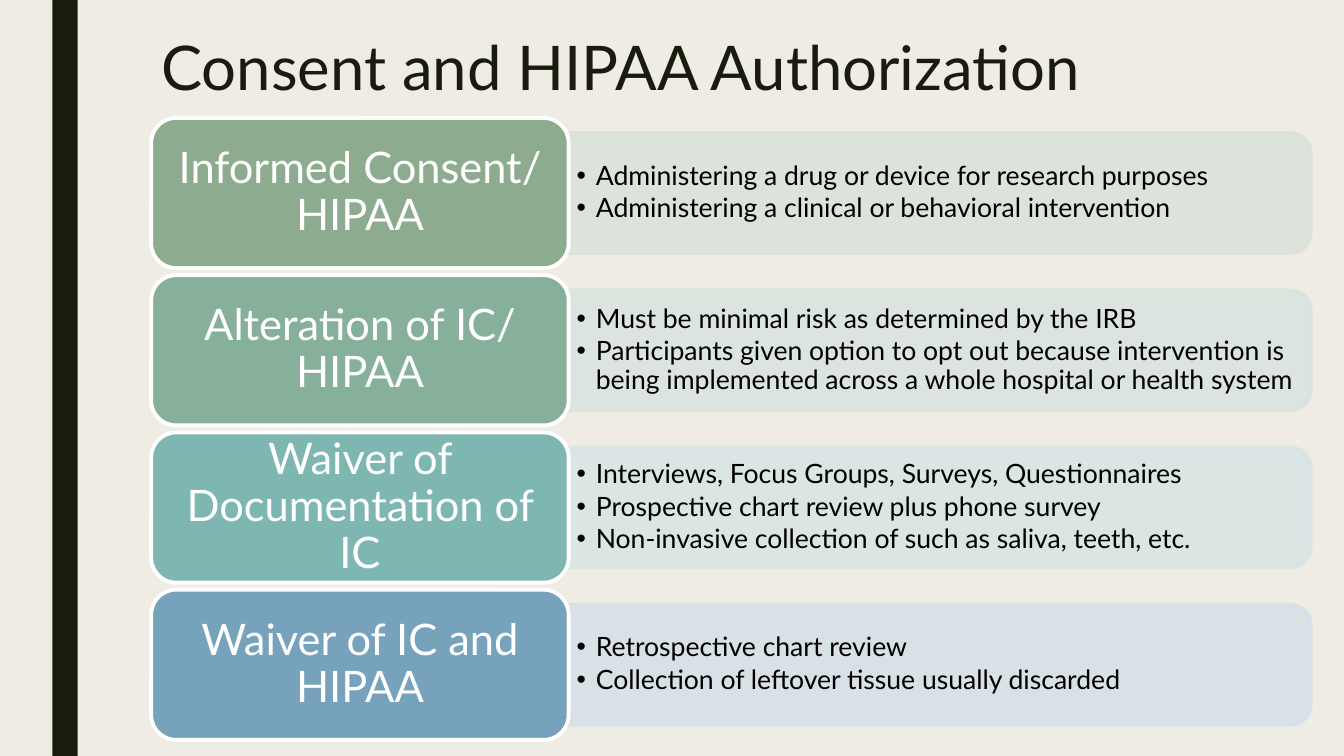
from pptx import Presentation
from pptx.dml.color import RGBColor
from pptx.enum.shapes import MSO_SHAPE
from pptx.enum.text import MSO_ANCHOR, PP_ALIGN
from pptx.oxml.ns import qn
from pptx.util import Inches, Pt
from lxml import etree

RECTANGLE = MSO_SHAPE.RECTANGLE
ROUNDED = MSO_SHAPE.ROUNDED_RECTANGLE
ROUNDED_TOP = MSO_SHAPE.ROUND_2_SAME_RECTANGLE
TOP, MIDDLE = MSO_ANCHOR.TOP, MSO_ANCHOR.MIDDLE
LEFT, CENTER = PP_ALIGN.LEFT, PP_ALIGN.CENTER

CREAM = RGBColor(0xEF, 0xED, 0xE3)
INK = RGBColor(0x19, 0x1B, 0x0E)
WHITE = RGBColor(0xFF, 0xFF, 0xFF)
BLACK = RGBColor(0x00, 0x00, 0x00)
SAGE, PALE_SAGE = RGBColor(0x8D, 0xAB, 0x8E), RGBColor(0xDB, 0xE2, 0xDB)
GREEN, PALE_GREEN = RGBColor(0x86, 0xB0, 0x9A), RGBColor(0xD9, 0xE4, 0xDE)
TEAL, PALE_TEAL = RGBColor(0x7E, 0xB6, 0xB1), RGBColor(0xD8, 0xE5, 0xE5)
BLUE, PALE_BLUE = RGBColor(0x77, 0xA2, 0xBB), RGBColor(0xD6, 0xE0, 0xE7)

ROWS = [
    ("Informed Consent/ HIPAA", SAGE, PALE_SAGE, [
        "Administering a drug or device for research purposes",
        "Administering a clinical or behavioral intervention"]),
    ("Alteration of IC/ HIPAA", GREEN, PALE_GREEN, [
        "Must be minimal risk as determined by the IRB",
        "Participants given option to opt out because intervention is "
        "being implemented across a whole hospital or health system"]),
    ("Waiver of Documentation of IC", TEAL, PALE_TEAL, [
        "Interviews, Focus Groups, Surveys, Questionnaires",
        "Prospective chart review plus phone survey",
        "Non-invasive collection of such as saliva, teeth, etc."]),
    ("Waiver of IC and HIPAA", BLUE, PALE_BLUE, [
        "Retrospective chart review",
        "Collection of leftover tissue usually discarded"]),
]
ROW_TOP, ROW_PITCH = 1.17, 1.56
LABEL_LEFT, LABEL_WIDTH, LABEL_HEIGHT = 1.5, 4.14, 1.49
PANEL_LEFT, PANEL_WIDTH, PANEL_HEIGHT = 5.64, 7.36, 1.19


class ConsentSlide:
    """Holds the font and the current slide, and draws its elements."""

    font = "Lato"

    def __init__(self, deck):
        self.slide = deck.slides.add_slide(deck.slide_layouts[5])
        self.slide.background.fill.solid()
        self.slide.background.fill.fore_color.rgb = CREAM

    def set_text(self, frame, lines, size, color, align, anchor, spacing, insets):
        frame.text = "\n".join(lines)
        frame.word_wrap = True
        frame.vertical_anchor = anchor
        frame.margin_left = frame.margin_right = Inches(insets[0])
        frame.margin_top = frame.margin_bottom = Inches(insets[1])
        for para in frame.paragraphs:
            para.alignment = align
            para.line_spacing = spacing
            for span in para.runs:
                span.font.name = self.font
                span.font.size = Pt(size)
                span.font.color.rgb = color

    def title(self, text):
        box = self.slide.shapes.title
        box.left, box.top = Inches(1.5), Inches(0.33)
        box.width, box.height = Inches(10.5), Inches(0.84)
        self.set_text(box.text_frame, [text], 44, INK, LEFT, TOP, 0.89, (0.1, 0.05))

    def shape(self, kind, left, top, width, height, fill, line=None):
        shape = self.slide.shapes.add_shape(
            kind, Inches(left), Inches(top), Inches(width), Inches(height))
        shape.shadow.inherit = False
        shape.fill.solid()
        shape.fill.fore_color.rgb = fill
        if line is None:
            shape.line.fill.background()
        else:
            shape.line.color.rgb = line
            shape.line.width = Pt(2.75)
        return shape

    def panel(self, top, color):
        left = PANEL_LEFT + (PANEL_WIDTH - PANEL_HEIGHT) / 2
        upright_top = top + (LABEL_HEIGHT - PANEL_WIDTH) / 2
        panel = self.shape(ROUNDED_TOP, left, upright_top,
                           PANEL_HEIGHT, PANEL_WIDTH, color, color)
        panel.rotation = 90
        for tint in panel._element.spPr.iter(qn("a:srgbClr")):
            etree.SubElement(tint, qn("a:alpha"), val="90000")

    def bullets(self, top, lines):
        box = self.slide.shapes.add_textbox(
            Inches(PANEL_LEFT), Inches(top + 0.21), Inches(7.3), Inches(1.07))
        self.set_text(box.text_frame, lines, 19, BLACK, LEFT, MIDDLE, 0.9, (0.08, 0.04))
        for para in box.text_frame.paragraphs:
            para.level = 1
            para.space_after = Pt(2.85)
            properties = para._p.get_or_add_pPr()
            properties.set("marL", str(Inches(0.19)))
            properties.set("indent", str(-Inches(0.19)))
            etree.SubElement(properties, qn("a:buFont"), typeface="Arial")
            etree.SubElement(properties, qn("a:buChar"), char="•")

    def label(self, top, text, color):
        label = self.shape(ROUNDED, LABEL_LEFT, top, LABEL_WIDTH, LABEL_HEIGHT,
                           color, WHITE)
        self.set_text(label.text_frame, [text], 31, WHITE, CENTER, MIDDLE, 0.9,
                      (0.13, 0.06))


def main():
    deck = Presentation()
    deck.slide_width, deck.slide_height = Inches(13.33), Inches(7.5)
    page = ConsentSlide(deck)
    page.shape(RECTANGLE, 0.52, 0, 0.25, 7.5, INK)
    page.title("Consent and HIPAA Authorization")
    for index, (heading, color, pale, lines) in enumerate(ROWS):
        top = ROW_TOP + index * ROW_PITCH
        page.panel(top, pale)
        page.bullets(top, lines)
        page.label(top, heading, color)
    deck.save("out.pptx")


if __name__ == "__main__":
    main()
